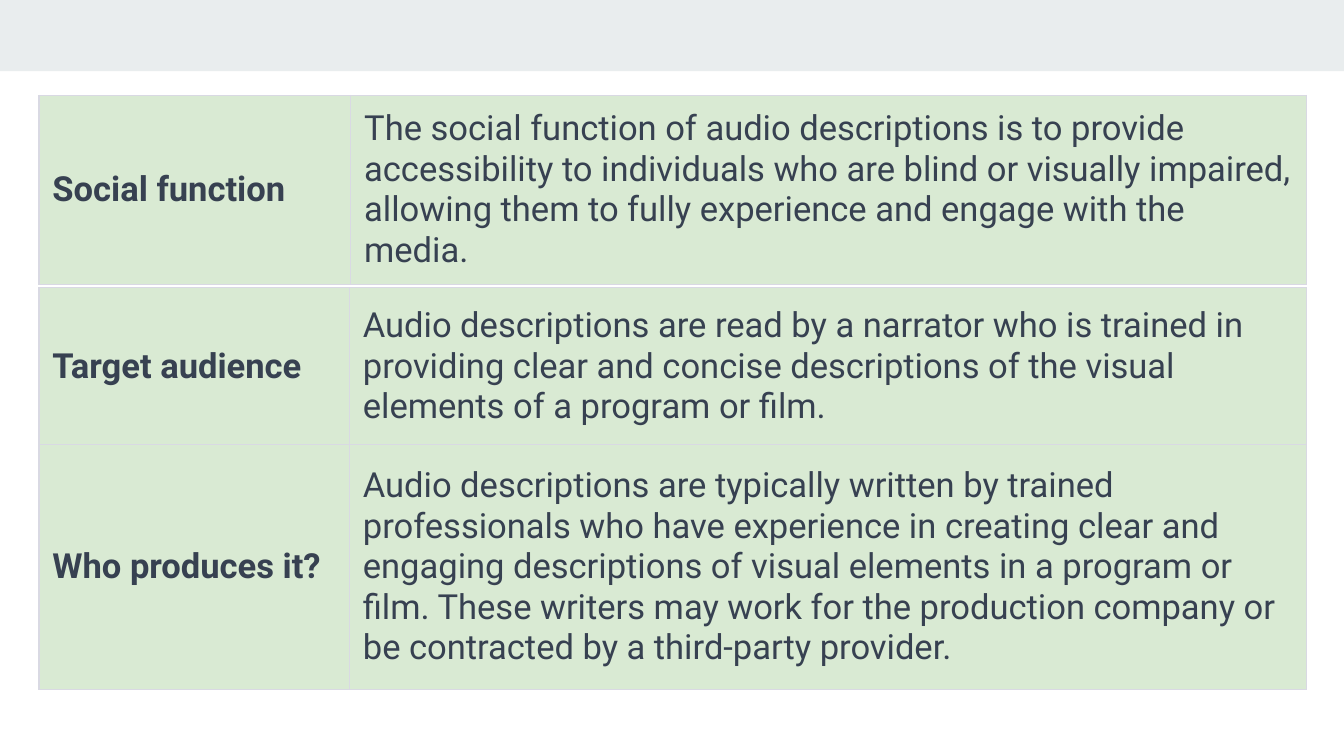
from dataclasses import dataclass

from lxml.etree import SubElement
from pptx import Presentation
from pptx.dml.color import RGBColor
from pptx.enum.shapes import MSO_SHAPE
from pptx.enum.text import MSO_ANCHOR
from pptx.oxml.ns import qn
from pptx.util import Inches, Pt


@dataclass(frozen=True)
class Theme:
    band: str = "E9EDEE"
    cell: str = "D9EAD3"
    border: str = "D9D9E3"
    text: str = "374151"
    font: str = "Roboto"
    size: float = 18.5
    border_width: float = 0.75
    space_before: float = 1
    inset: float = 0.1


THEME = Theme()

SOCIAL_FUNCTION = [
    (1.4, "Social function",
     "The social function of audio descriptions is to provide accessibility to "
     "individuals who are blind or visually impaired, allowing them to fully "
     "experience and engage with the media."),
]
AUDIENCE_AND_PRODUCERS = [
    (1.17, "Target audience",
     "Audio descriptions are read by a narrator who is trained in providing "
     "clear and concise descriptions of the visual elements of a program or film."),
    (1.82, "Who produces it?",
     "Audio descriptions are typically written by trained professionals who have "
     "experience in creating clear and engaging descriptions of visual elements "
     "in a program or film. These writers may work for the production company or "
     "be contracted by a third-party provider."),
]


def add_band(slide, left, top, width, height):
    band = slide.shapes.add_shape(
        MSO_SHAPE.RECTANGLE, Inches(left), Inches(top), Inches(width), Inches(height))
    band.shadow.inherit = False
    band.fill.solid()
    band.fill.fore_color.rgb = RGBColor.from_string(THEME.band)
    band.line.fill.background()


def add_borders(cell):
    properties = cell._tc.get_or_add_tcPr()
    for position, side in enumerate(("lnL", "lnR", "lnT", "lnB")):
        line = SubElement(properties, qn(f"a:{side}"), w=str(Pt(THEME.border_width)))
        fill = SubElement(line, qn("a:solidFill"))
        SubElement(fill, qn("a:srgbClr"), val=THEME.border)
        properties.insert(position, line)


def fill_cell(cell, text, bold):
    cell.fill.solid()
    cell.fill.fore_color.rgb = RGBColor.from_string(THEME.cell)
    add_borders(cell)
    cell.vertical_anchor = MSO_ANCHOR.MIDDLE
    cell.margin_left = cell.margin_right = Inches(THEME.inset)
    cell.margin_top = cell.margin_bottom = Inches(THEME.inset)
    paragraph = cell.text_frame.paragraphs[0]
    paragraph.space_before = Pt(THEME.space_before)
    run = paragraph.add_run()
    run.text = text
    run.font.name = THEME.font
    run.font.size = Pt(THEME.size)
    run.font.bold = bold
    run.font.color.rgb = RGBColor.from_string(THEME.text)


def add_topic_table(slide, left, top, width, topic_width, topics):
    height = sum(row_height for row_height, _, _ in topics)
    table = slide.shapes.add_table(
        len(topics), 2, Inches(left), Inches(top), Inches(width), Inches(height)).table
    table.first_row = False
    table.horz_banding = False
    table.columns[0].width = Inches(topic_width)
    table.columns[1].width = Inches(width - topic_width)
    for index, (row_height, topic, explanation) in enumerate(topics):
        table.rows[index].height = Inches(row_height)
        fill_cell(table.cell(index, 0), topic, True)
        fill_cell(table.cell(index, 1), explanation, False)


def main():
    presentation = Presentation()
    presentation.slide_width = Inches(10)
    presentation.slide_height = presentation.slide_width * 9 // 16
    slide = presentation.slides.add_slide(presentation.slide_layouts[6])
    add_band(slide, 0, 0, 10, 0.53)
    add_topic_table(slide, 0.29, 2.14, 9.43, 2.31, AUDIENCE_AND_PRODUCERS)
    add_topic_table(slide, 0.29, 0.71, 9.43, 2.32, SOCIAL_FUNCTION)
    presentation.save("out.pptx")


if __name__ == "__main__":
    main()
